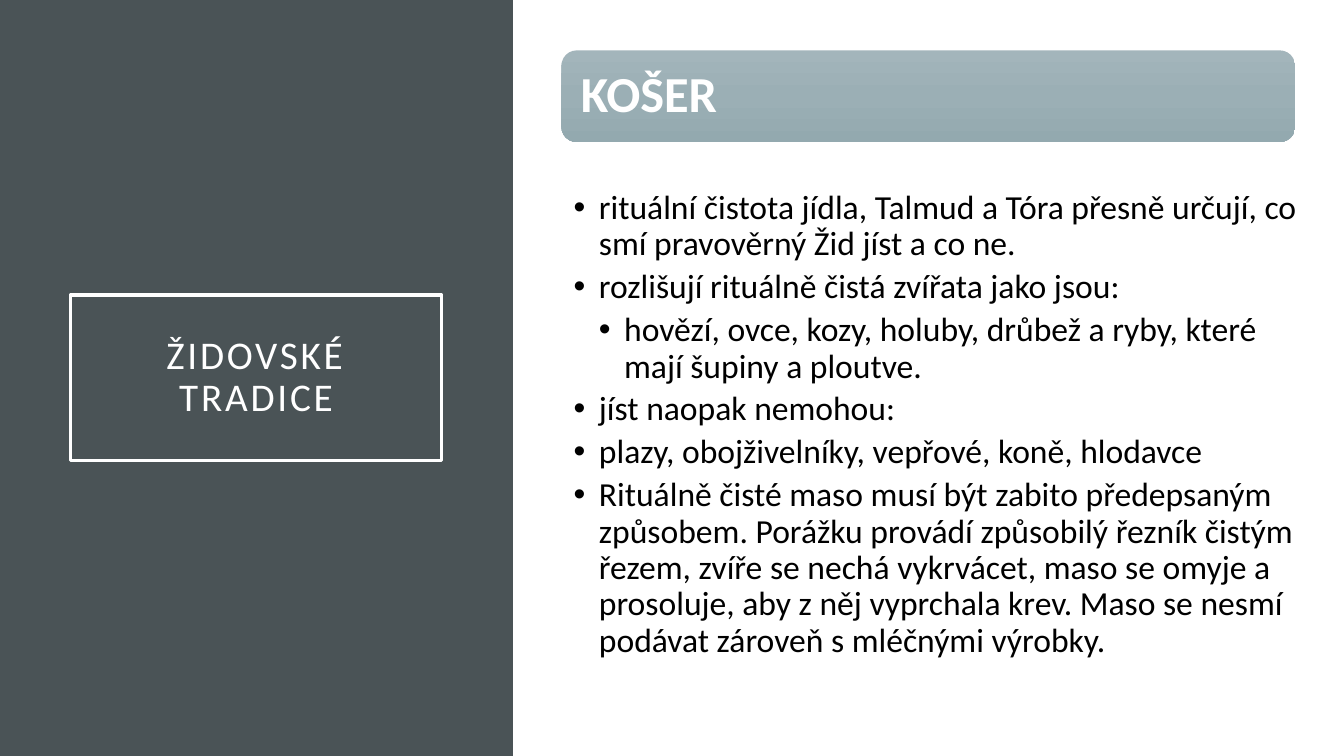
from copy import deepcopy

from lxml.etree import SubElement
from pptx import Presentation
from pptx.dml.color import RGBColor
from pptx.enum.shapes import MSO_SHAPE
from pptx.enum.text import MSO_ANCHOR, PP_ALIGN
from pptx.oxml.ns import qn
from pptx.util import Cm, Pt

TITLE = "ŽIDOVSKÉ TRADICE"
HEADING = "KOŠER"
BULLETS = [  # (level, text)
    (1, "rituální čistota jídla, Talmud a Tóra přesně určují, co smí pravověrný Žid jíst a co ne."),
    (1, "rozlišují rituálně čistá zvířata jako jsou:"),
    (2, "hovězí, ovce, kozy, holuby, drůbež a ryby, které mají šupiny a ploutve."),
    (1, "jíst naopak nemohou:"),
    (1, "plazy, obojživelníky, vepřové, koně, hlodavce"),
    (1, "Rituálně čisté maso musí být zabito předepsaným způsobem. Porážku provádí "
        "způsobilý řezník čistým řezem, zvíře se nechá vykrvácet, maso se omyje a prosoluje, "
        "aby z něj vyprchala krev. Maso se nesmí podávat zároveň s mléčnými výrobky."),
]

WHITE = RGBColor(0xFF, 0xFF, 0xFF)
BLACK = RGBColor(0x00, 0x00, 0x00)
SLATE = RGBColor(0x4A, 0x53, 0x56)
BANNER_STOPS = [
    (0, RGBColor(0xA3, 0xB5, 0xBB)),
    (0.5, RGBColor(0x9B, 0xAF, 0xB5)),
    (1, RGBColor(0x93, 0xA9, 0xAF)),
]
FONT = "Calibri"
INDENT = Cm(0.635)

# left, top, width, height in cm
PANEL = (0, 0, 12.93, 19.05)
TITLE_BOX = (1.78, 7.44, 9.35, 4.17)
BANNER = (14.15, 1.27, 18.49, 2.31)
BODY = (13.82, 4.72, 19.69, 11.79)


def add_box(slide, box, shape):
    sp = slide.shapes.add_shape(shape, *map(Cm, box))
    sp.shadow.inherit = False
    sp.fill.background()
    sp.line.fill.background()
    return sp


def set_frame(tf, anchor, insets):
    """Insets are left, top, right and bottom in cm."""
    tf.word_wrap = True
    tf.vertical_anchor = anchor
    for side, inset in zip(("left", "top", "right", "bottom"), insets):
        setattr(tf, f"margin_{side}", Cm(inset))


def write(p, text, align=PP_ALIGN.LEFT, after=0, **font):
    p.alignment = align
    p.line_spacing = 0.9
    p.space_after = Pt(after)
    r = p.add_run()
    r.text = text
    r.font.color.rgb = font.pop("color")
    for name, value in {"name": FONT, **font}.items():
        setattr(r.font, name, value)
    return r


def add_bullet(p, level):
    pPr = p._p.get_or_add_pPr()
    pPr.set("marL", str(level * INDENT))
    pPr.set("indent", str(-INDENT))
    SubElement(pPr, qn("a:buFont")).set("typeface", "Arial")
    SubElement(pPr, qn("a:buChar")).set("char", "•")


def fill_gradient(sp, stops):
    """Fill from top to bottom with any number of stops."""
    sp.fill.gradient()
    sp.fill.gradient_angle = 270
    gs_list = sp._element.spPr.find(".//" + qn("a:gsLst"))
    while len(gs_list) < len(stops):
        gs_list.append(deepcopy(gs_list[-1]))
    for stop, (position, color) in zip(sp.fill.gradient_stops, stops):
        stop.position = position
        stop.color.rgb = color


def main():
    prs = Presentation()
    prs.slide_width, prs.slide_height = Cm(33.87), Cm(19.05)
    slide = prs.slides.add_slide(prs.slide_layouts[6])

    panel = add_box(slide, PANEL, MSO_SHAPE.RECTANGLE)
    panel.fill.solid()
    panel.fill.fore_color.rgb = SLATE

    title = add_box(slide, TITLE_BOX, MSO_SHAPE.RECTANGLE)
    title.line.color.rgb = WHITE
    title.line.width = Pt(2.5)
    set_frame(title.text_frame, MSO_ANCHOR.MIDDLE, [0.51] * 4)
    r = write(title.text_frame.paragraphs[0], TITLE, PP_ALIGN.CENTER,
              size=Pt(28), color=WHITE)
    r.font._element.set("spc", "200")

    banner = add_box(slide, BANNER, MSO_SHAPE.ROUNDED_RECTANGLE)
    fill_gradient(banner, BANNER_STOPS)
    set_frame(banner.text_frame, MSO_ANCHOR.MIDDLE, [0.38] * 4)
    write(banner.text_frame.paragraphs[0], HEADING, size=Pt(36), bold=True, color=WHITE)

    tf = slide.shapes.add_textbox(*map(Cm, BODY)).text_frame
    set_frame(tf, MSO_ANCHOR.TOP, (0.64, 0.08, 0.48, 0.08))
    for i, (level, text) in enumerate(BULLETS):
        p = tf.add_paragraph() if i else tf.paragraphs[0]
        p.level = level
        write(p, text, after=4.8, size=Pt(24), color=BLACK)
        add_bullet(p, level)

    prs.save("out.pptx")


if __name__ == "__main__":
    main()
